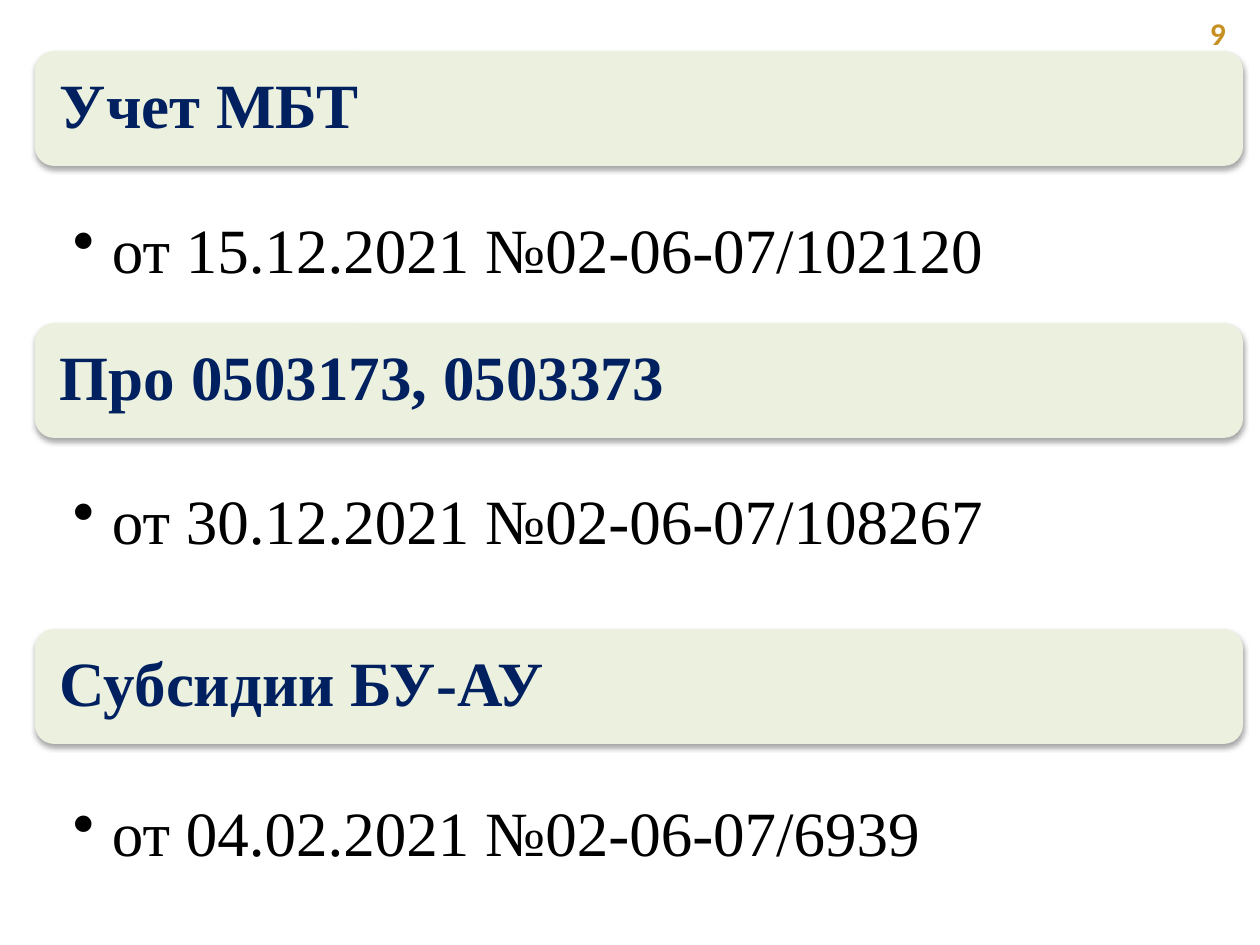
from lxml import etree
from pptx import Presentation
from pptx import util as u
from pptx.dml.color import RGBColor
from pptx.enum import shapes, text
from pptx.oxml import parse_xml
from pptx.oxml.ns import nsdecls, qn

COLORS = {"bar": "EBF1DE", "heading": "002060", "body": "000000",
          "number": "C79023", "shadow": "000000"}
SERIF = "Times New Roman"
LEFT, WIDTH = 35, 1208
SECTIONS = [
    (51, 194, "Учет МБТ", "от 15.12.2021 №02-06-07/102120"),
    (323, 465, "Про 0503173, 0503373", "от 30.12.2021 №02-06-07/108267"),
    (629, 777, "Субсидии БУ-АУ", "от 04.02.2021 №02-06-07/6939"),
]


def px(length):
    """Turn pixels into EMU."""
    return u.Emu(round(length * 914400 / 126))


def add_text(parent, box, words, color, size=36, font=SERIF, bold=False,
             insets=(13, 6, 13, 6), anchor=text.MSO_ANCHOR.TOP):
    """Add a one-paragraph text box and return its paragraph."""
    frame = parent.add_textbox(*map(px, box)).text_frame
    frame.word_wrap = True
    frame.vertical_anchor = anchor
    (frame.margin_left, frame.margin_top,
     frame.margin_right, frame.margin_bottom) = map(px, insets)
    paragraph = frame.paragraphs[0]
    paragraph.text = words
    paragraph.font.size = u.Pt(size)
    paragraph.font.name = font
    paragraph.font.bold = bold
    paragraph.font.color.rgb = RGBColor.from_string(COLORS[color])
    return paragraph


def add_bar(parent, top):
    """Add a rounded bar with a soft shadow below it."""
    shape = parent.add_shape(shapes.MSO_SHAPE.ROUNDED_RECTANGLE,
                             *map(px, (LEFT, top, WIDTH, 115)))
    shape.fill.solid()
    shape.fill.fore_color.rgb = RGBColor.from_string(COLORS["bar"])
    shape.line.fill.background()
    shape.shadow.inherit = False
    shape._element.spPr.find(qn("a:effectLst")).append(parse_xml(
        f'<a:outerShdw {nsdecls("a")} blurRad="40000" dist="23000" '
        f'dir="5400000" rotWithShape="0"><a:srgbClr val="{COLORS["shadow"]}">'
        '<a:alpha val="35000"/></a:srgbClr></a:outerShdw>'))


def add_bullet(paragraph, indent):
    """Give a paragraph a round bullet with a hanging indent."""
    properties = paragraph._p.get_or_add_pPr()
    properties.set("marL", str(px(indent)))
    properties.set("indent", str(-px(indent)))
    bullet = etree.Element(qn("a:buChar"), char="•")
    properties.find(qn("a:defRPr")).addprevious(bullet)


def add_section(slide, bar_top, detail_top, heading, detail):
    """Add a heading bar and the bulleted letter reference below it."""
    group = slide.shapes.add_group_shape().shapes
    add_bar(group, bar_top)
    title = add_text(group, (LEFT + 6, bar_top + 6, 1197, 103), heading,
                     "heading", bold=True, insets=(19, 19, 19, 19),
                     anchor=text.MSO_ANCHOR.MIDDLE)
    title.line_spacing = 0.9
    reference = add_text(group, (LEFT, detail_top, WIDTH, 107), detail,
                         "body", insets=(38, 6, 35, 6))
    reference.level = 1
    reference.alignment = text.PP_ALIGN.JUSTIFY
    reference.line_spacing = 1.14
    reference.space_after = u.Pt(12)
    add_bullet(reference, 39)


def main():
    """Build and save the slide."""
    presentation = Presentation()
    presentation.slide_width, presentation.slide_height = px(1260), px(945)
    slide = presentation.slides.add_slide(presentation.slide_layouts[6])
    add_text(slide.shapes, (1197, 8, 63, 50), "9", "number", size=18,
             font="Calibri", bold=True)
    for section in SECTIONS:
        add_section(slide, *section)
    presentation.save("out.pptx")


if __name__ == "__main__":
    main()
